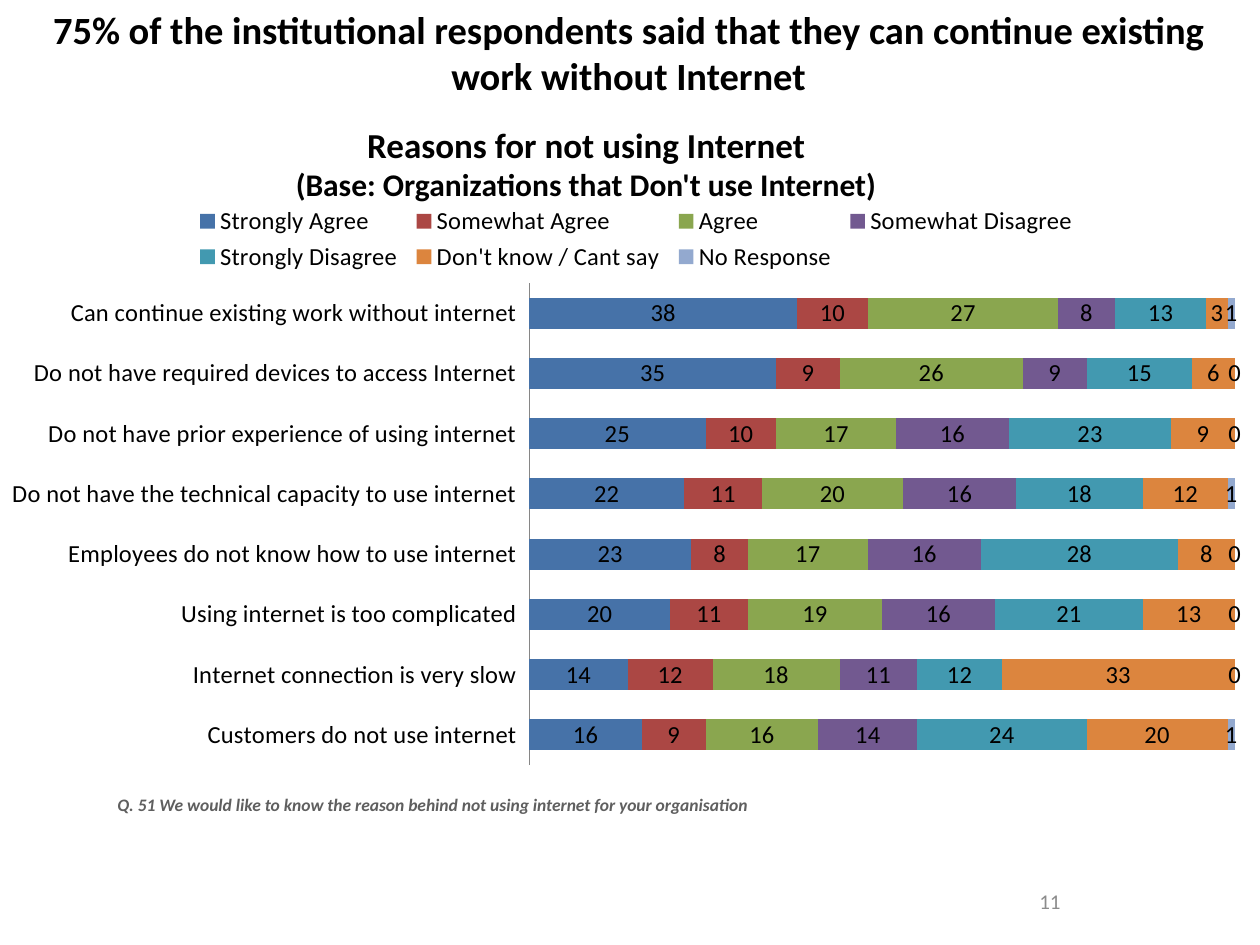
from pptx import Presentation
from pptx.chart.data import CategoryChartData
from pptx.dml.color import RGBColor
from pptx.enum.chart import XL_CHART_TYPE, XL_LABEL_POSITION, XL_LEGEND_POSITION, XL_TICK_LABEL_POSITION, XL_TICK_MARK
from pptx.enum.text import MSO_ANCHOR, PP_ALIGN
from pptx.oxml import parse_xml
from pptx.oxml.ns import nsdecls, qn
from pptx.util import Pt

BAR_STACKED = XL_CHART_TYPE.BAR_STACKED
LABEL_CENTER = XL_LABEL_POSITION.CENTER
LEGEND_TOP = XL_LEGEND_POSITION.TOP
TICK_LOW = XL_TICK_LABEL_POSITION.LOW
NO_TICK = XL_TICK_MARK.NONE
CENTER, LEFT = PP_ALIGN.CENTER, PP_ALIGN.LEFT
TOP, MIDDLE = MSO_ANCHOR.TOP, MSO_ANCHOR.MIDDLE

COLORS = {
    "text": "000000",
    "note": "5F5F5F",
    "number": "8C8C8C",
    "axis": "868686",
    "Strongly Agree": "4672A8",
    "Somewhat Agree": "AB4744",
    "Agree": "8AA64F",
    "Somewhat Disagree": "725990",
    "Strongly Disagree": "4299B0",
    "Don't know / Cant say": "DC853E",
    "No Response": "93A9CF",
}
ANSWERS = list(COLORS)[4:]
REASONS = {
    "Can continue existing work without internet": (38, 10, 27, 8, 13, 3, 1),
    "Do not have required devices to access Internet": (35, 9, 26, 9, 15, 6, 0),
    "Do not have prior experience of using internet": (25, 10, 17, 16, 23, 9, 0),
    "Do not have the technical capacity to use internet": (22, 11, 20, 16, 18, 12, 1),
    "Employees do not know how to use internet": (23, 8, 17, 16, 28, 8, 0),
    "Using internet is too complicated": (20, 11, 19, 16, 21, 13, 0),
    "Internet connection is very slow": (14, 12, 18, 11, 12, 33, 0),
    "Customers do not use internet": (16, 9, 16, 14, 24, 20, 1),
}


class SurveySlide:
    """Holds the style and the current slide, and adds each kind of element."""

    font_name = "Calibri"

    def __init__(self, presentation):
        self.slide = presentation.slides.add_slide(presentation.slide_layouts[5])

    def color(self, name):
        return RGBColor.from_string(COLORS[name])

    def style(self, font, size, color="text", bold=False, italic=False):
        font.name, font.size = self.font_name, Pt(size)
        font.bold, font.italic = bold, italic
        font.color.rgb = self.color(color)

    def fill_text(self, shape, lines, align, anchor, **look):
        frame = shape.text_frame
        frame.word_wrap = True
        frame.vertical_anchor = anchor
        for index, (text, size) in enumerate(lines):
            paragraph = frame.add_paragraph() if index else frame.paragraphs[0]
            paragraph.alignment = align
            run = paragraph.add_run()
            run.text = text
            self.style(run.font, size, **look)

    def title(self, box, text, size):
        shape = self.slide.shapes.title
        shape.left, shape.top, shape.width, shape.height = map(Pt, box)
        self.fill_text(shape, [(text, size)], CENTER, TOP, bold=True)

    def text(self, box, lines, align=CENTER, anchor=TOP, **look):
        shape = self.slide.shapes.add_textbox(*map(Pt, box))
        self.fill_text(shape, lines, align, anchor, **look)

    def place(self, element, position, target, x, y, width, height):
        for layout in element.findall(qn("c:layout")):
            element.remove(layout)
        inner = '<c:layoutTarget val="inner"/>' if target else ""
        element.insert(position, parse_xml(
            f'<c:layout {nsdecls("c")}><c:manualLayout>{inner}'
            '<c:xMode val="edge"/><c:yMode val="edge"/>'
            f'<c:x val="{x}"/><c:y val="{y}"/><c:w val="{width}"/><c:h val="{height}"/>'
            '</c:manualLayout></c:layout>'))

    def chart(self, box, size):
        data = CategoryChartData()
        data.categories = list(REASONS)
        for answer, values in zip(ANSWERS, zip(*REASONS.values())):
            data.add_series(answer, values)
        chart = self.slide.shapes.add_chart(BAR_STACKED, *map(Pt, box), data).chart
        self.style(chart.font, size)
        chart.has_title = False
        chart.has_legend = True
        chart.legend.position = LEGEND_TOP
        chart.legend.include_in_layout = False
        self.style(chart.legend.font, size)

        reasons = chart.category_axis
        reasons.reverse_order = True
        reasons.major_tick_mark = reasons.minor_tick_mark = NO_TICK
        reasons.tick_label_position = TICK_LOW
        reasons.format.line.color.rgb = self.color("axis")
        percent = chart.value_axis
        percent.minimum_scale, percent.maximum_scale = 0, 100
        percent.has_major_gridlines = False
        percent.visible = False

        plot = chart.plots[0]
        plot.gap_width, plot.overlap = 95, 100
        plot.vary_by_categories = False
        for series in plot.series:
            series.format.fill.solid()
            series.format.fill.fore_color.rgb = self.color(series.name)
            labels = series.data_labels
            labels.show_value = True
            labels.position = LABEL_CENTER
            self.style(labels.font, size)

        plot_area, legend = chart._chartSpace.xpath("c:chart/c:plotArea | c:chart/c:legend")
        self.place(plot_area, 0, True, 0.42, 0.16, 0.56, 0.82)
        self.place(legend, 1, False, 0.15, 0.02, 0.71, 0.13)


def main():
    presentation = Presentation()
    presentation.slide_width, presentation.slide_height = Pt(720), Pt(540)
    survey = SurveySlide(presentation)
    survey.chart((0, 108, 720, 336), 14)
    survey.text((120, 67, 430, 53), [
        ("Reasons for not using Internet", 20),
        ("(Base: Organizations that Don't use Internet)", 18),
    ], bold=True)
    survey.text((516, 500.5, 168, 28.75), [("11", 12)], anchor=MIDDLE, color="number")
    survey.text((60, 450, 435.5, 19.5), [
        ("Q. 51 We would like to know the reason behind not using internet for your organisation", 10),
    ], LEFT, color="note", bold=True, italic=True)
    survey.title((-1.5, 0, 721.5, 87), "75% of the institutional respondents said that they can "
                 "continue existing work without Internet", 22)
    presentation.save("out.pptx")


if __name__ == "__main__":
    main()
